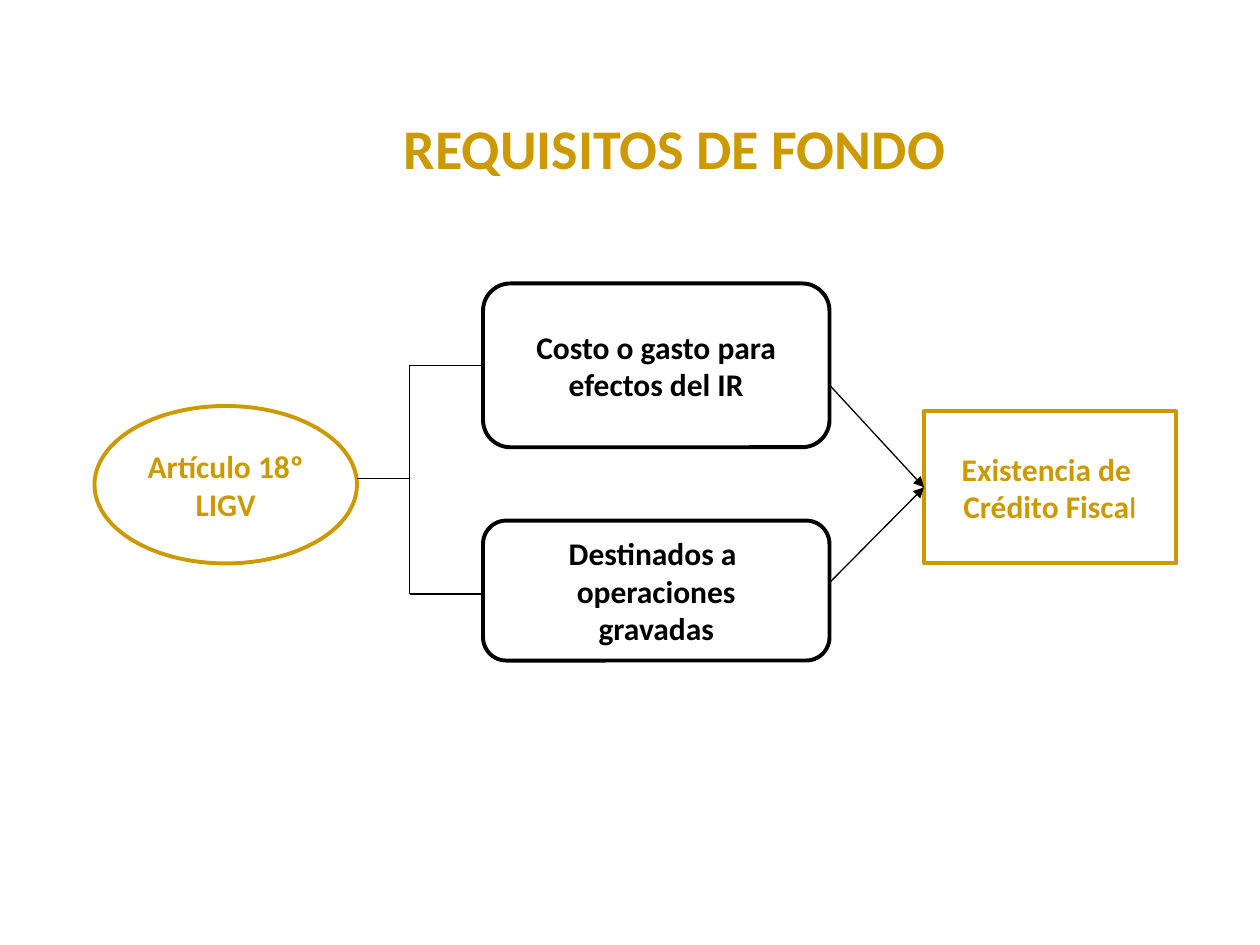
from lxml import etree
from pptx import Presentation
from pptx.dml.color import RGBColor
from pptx.enum import shapes, text
from pptx.oxml.ns import qn
from pptx.util import Pt

GOLD = RGBColor(0xCC, 0x99, 0x00)
BLACK = RGBColor(0, 0, 0)
WHITE = RGBColor(0xFF, 0xFF, 0xFF)


def apply_format(target, values):
    for name, value in values.items():
        setattr(target, name, value)


def format_font(font, size, color):
    apply_format(font, {"name": "Calibri", "size": Pt(size), "bold": True})
    font.color.rgb = color


def add_title(slide, left, top, width, height):
    title = slide.shapes.title
    apply_format(title, {"left": Pt(left), "top": Pt(top),
                         "width": Pt(width), "height": Pt(height)})
    frame = title.text_frame
    frame.text = "REQUISITOS DE FONDO"
    apply_format(frame, {"word_wrap": True, "auto_size": text.MSO_AUTO_SIZE.NONE,
                         "vertical_anchor": text.MSO_ANCHOR.TOP,
                         "margin_right": Pt(22)})
    paragraph = frame.paragraphs[0]
    paragraph.alignment = text.PP_ALIGN.CENTER
    format_font(paragraph.font, 32, GOLD)


def add_node(slide, kind, left, top, width, height, color, lines):
    node = slide.shapes.add_shape(kind, Pt(left), Pt(top), Pt(width), Pt(height))
    node.shadow.inherit = False
    node.fill.solid()
    node.fill.fore_color.rgb = WHITE
    node.line.color.rgb = color
    node.line.width = Pt(2.25)
    frame = node.text_frame
    apply_format(frame, {"word_wrap": False,
                         "vertical_anchor": text.MSO_ANCHOR.MIDDLE})
    for index, line in enumerate(lines):
        paragraph = frame.add_paragraph() if index else frame.paragraphs[0]
        paragraph.alignment = text.PP_ALIGN.CENTER
        run = paragraph.add_run()
        run.text = line
        format_font(run.font, 18, color)
    return node


def add_line(slide, start, end, target=None, arrow=False):
    connector = slide.shapes.add_connector(
        shapes.MSO_CONNECTOR.STRAIGHT, *(Pt(value) for value in (*start, *end)))
    connector.line.color.rgb = BLACK
    connector.line.width = Pt(0.75)
    if arrow:
        etree.SubElement(connector.line._get_or_add_ln(), qn("a:tailEnd"),
                         type="triangle")
    etree.SubElement(connector._element.spPr, qn("a:effectLst"))
    if target is not None:
        connector.end_connect(target, 1)


def add_flow(slide, left, top):
    kinds = shapes.MSO_SHAPE
    middle = left + 222
    right = left + 474
    add_node(slide, kinds.OVAL, left, top + 70, 150, 90, GOLD,
             ["Artículo 18º", "LIGV"])
    cost = add_node(slide, kinds.ROUNDED_RECTANGLE, middle, top, 198, 93.6, BLACK,
                    ["Costo o gasto para", "efectos del IR"])
    add_node(slide, kinds.ROUNDED_RECTANGLE, middle, top + 135.5, 198, 80, BLACK,
             ["Destinados a ", "operaciones", "gravadas"])
    credit = add_node(slide, kinds.RECTANGLE, right, top + 73, 144, 87, GOLD,
                      ["Existencia de ", "Crédito Fisca"])
    last_letter = credit.text_frame.paragraphs[-1].add_run()
    last_letter.text = "l"
    format_font(last_letter.font, 18, GOLD)
    last_letter.font.name = "Comic Neue"

    for offset in (58, 171):
        add_line(slide, (middle + 198, top + offset), (right, top + 116.5),
                 credit, True)

    trunk = left + 180
    upper, lower = top + 46.8, top + 177.5
    add_line(slide, (left + 150, top + 111.5), (trunk, top + 111.5))
    add_line(slide, (trunk, upper), (trunk, lower))
    add_line(slide, (trunk, upper), (middle, upper), cost)
    add_line(slide, (trunk, lower), (middle, lower))


def main():
    presentation = Presentation()
    presentation.slide_width = Pt(720)
    presentation.slide_height = Pt(540)
    slide = presentation.slides.add_slide(presentation.slide_layouts[5])
    add_title(slide, 102, 61, 582, 46)
    add_flow(slide, 54, 162)
    presentation.save("out.pptx")


if __name__ == "__main__":
    main()
